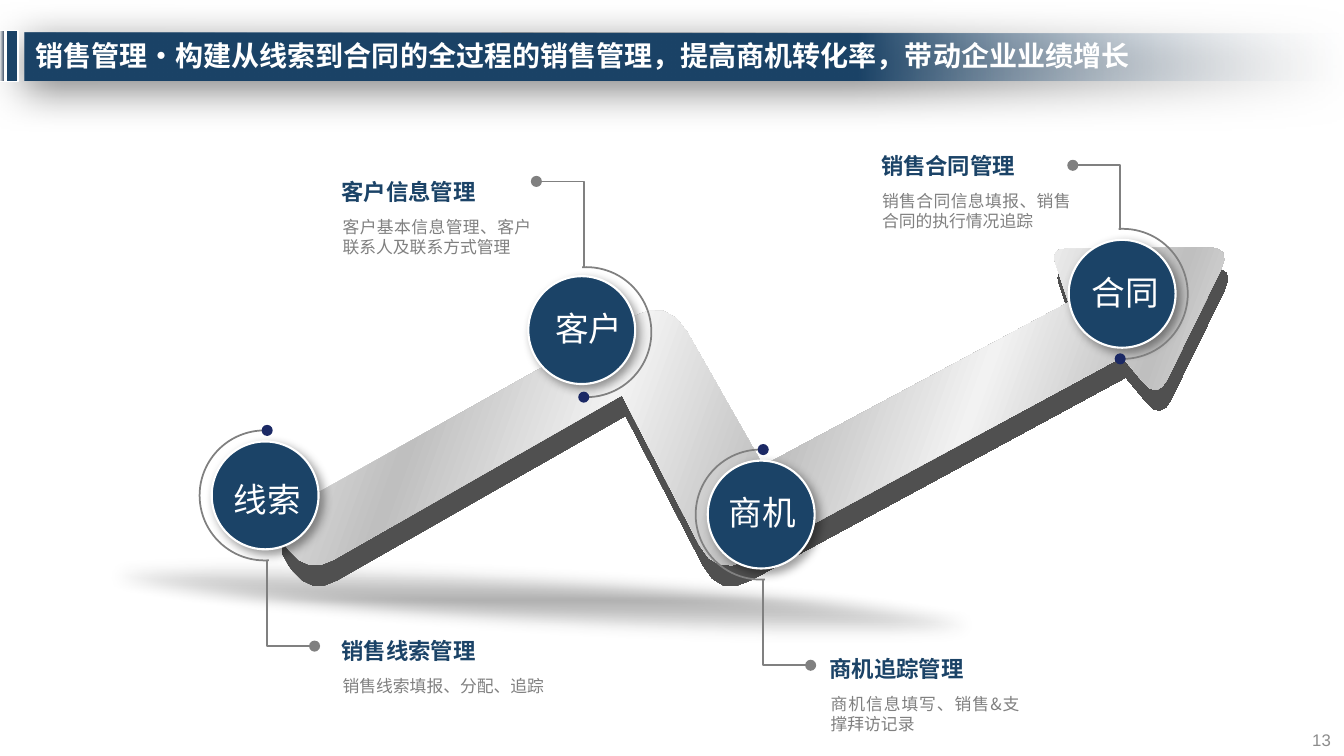
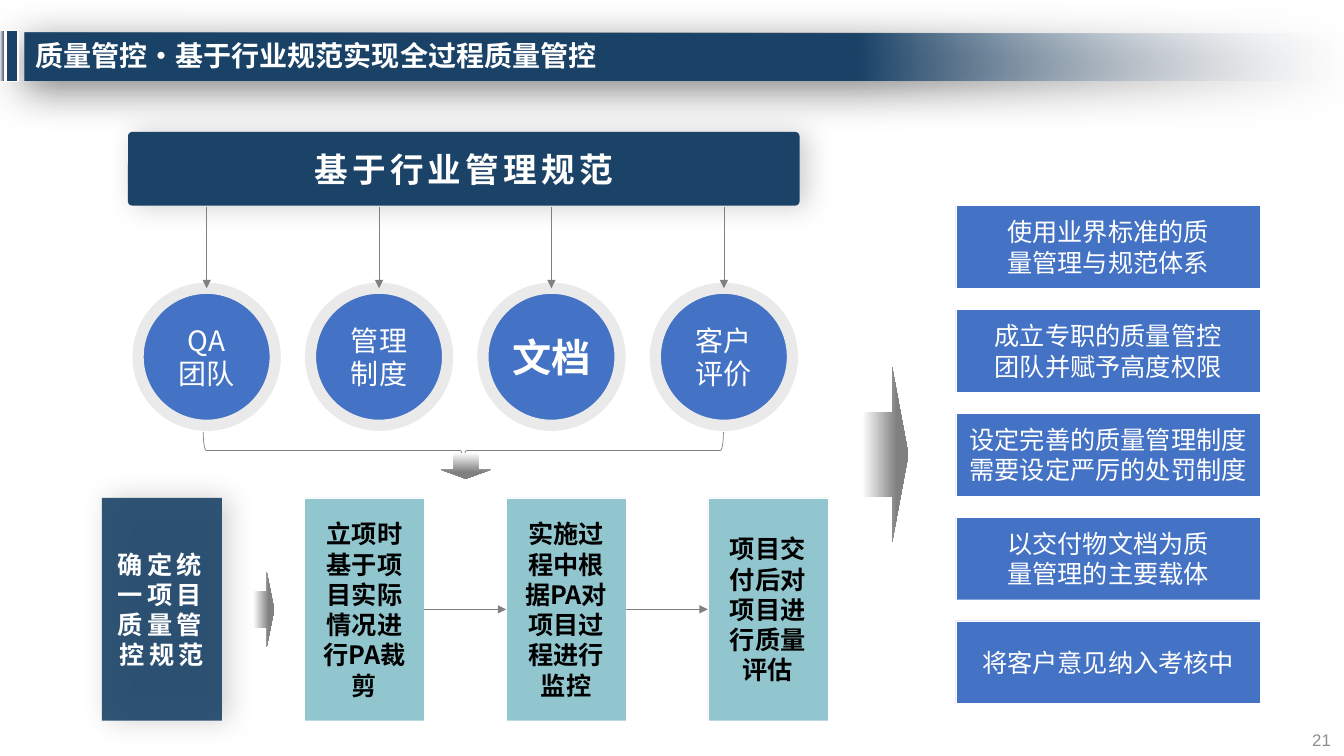
from lxml import etree
from pptx import Presentation
from pptx import util as u
from pptx.dml.color import RGBColor
from pptx.enum import shapes, text
from pptx.oxml import parse_xml
from pptx.oxml.ns import nsdecls, qn

C = {
    "navy": "1B4367", "blue": "4472C4", "teal": "91C6CE", "dot": "1B2965",
    "gray": "808080", "number": "8C8C8C", "ring": "EAEAEA", "side": "505050",
    "slate": "44546A", "pale": "F2F2F2", "silver": "BFBFBF", "mist": "F6F8FC",
    "white": "FFFFFF", "black": "000000",
}
FONT = "Noto Sans CJK SC"
SHAPE = shapes.MSO_SHAPE
ALIGN = text.PP_ALIGN
ANCHOR = text.MSO_ANCHOR
ARROW_FADE = [(0, "white"), (75, "gray")]


def rgb(name):
    return RGBColor.from_string(C[name])


def color_xml(name, alpha=100):
    return (f'<a:srgbClr val="{C[name]}"><a:alpha val="{alpha * 1000}"/>'
            '</a:srgbClr>')


def set_fill(sp, fill, angle=0):
    """Fill with nothing, a colour name, or (position, colour[, alpha]) stops.

    An angle of None makes the gradient follow the shape from its middle.
    """
    if fill is None:
        sp.fill.background()
    elif isinstance(fill, str):
        sp.fill.solid()
        sp.fill.fore_color.rgb = rgb(fill)
    else:
        stops = "".join(f'<a:gs pos="{pos * 1000}">{color_xml(*color)}</a:gs>'
                        for pos, *color in fill)
        if angle is None:
            way = ('<a:path path="shape"><a:fillToRect l="50000" t="50000" '
                   'r="50000" b="50000"/></a:path>')
        else:
            way = f'<a:lin ang="{angle * 60000}" scaled="0"/>'
        sp.fill.background()
        props = sp._element.spPr
        props.replace(props.find(qn("a:noFill")), parse_xml(
            f'<a:gradFill {nsdecls("a")} rotWithShape="1">'
            f'<a:gsLst>{stops}</a:gsLst>{way}</a:gradFill>'))


def style(sp, fill=None, angle=0, line=None, width=1, shadow=None,
          shadow_color="black", soft=0):
    """Shadow is (alpha, blur, distance, direction), in points and degrees."""
    set_fill(sp, fill, angle)
    if line:
        sp.line.color.rgb = rgb(line)
        sp.line.width = u.Pt(width)
    else:
        sp.line.fill.background()
    sp.shadow.inherit = False
    effects = sp._element.spPr.find(qn("a:effectLst"))
    if shadow:
        alpha, blur, dist, direction = shadow
        effects.append(parse_xml(
            f'<a:outerShdw {nsdecls("a")} blurRad="{u.Pt(blur)}" '
            f'dist="{u.Pt(dist)}" dir="{direction * 60000}" algn="ctr" '
            f'rotWithShape="0">{color_xml(shadow_color, alpha)}'
            '</a:outerShdw>'))
    if soft:
        etree.SubElement(effects, qn("a:softEdge")).set("rad", str(u.Pt(soft)))
    return sp


def add_shape(s, kind, x, y, w, h, adj=(), rotation=0, **look):
    sp = s.shapes.add_shape(kind, *map(u.Inches, (x, y, w, h)))
    for i, value in enumerate(adj):
        sp.adjustments[i] = value
    sp.rotation = rotation
    return style(sp, **look)


def add_dot(s, cx, cy, fill):
    add_shape(s, SHAPE.OVAL, cx - 0.055, cy - 0.055, 0.11, 0.11, fill=fill)


def add_outline(s, points, closed=True, **look):
    emu = [(u.Inches(x), u.Inches(y)) for x, y in points]
    builder = s.shapes.build_freeform(*emu[0])
    builder.add_line_segments(emu[1:], close=closed)
    return style(builder.convert_to_shape(), **look)


def write(sp, content, size=12, color="white", bold=False, align=ALIGN.LEFT,
          anchor=ANCHOR.TOP, inset=(0.1, 0.05), wrap=True, spacing=0,
          font=FONT, line_spacing=None):
    tf = sp.text_frame
    tf.auto_size = text.MSO_AUTO_SIZE.NONE
    tf.word_wrap = wrap
    tf.vertical_anchor = anchor
    tf.margin_left = tf.margin_right = u.Inches(inset[0])
    tf.margin_top = tf.margin_bottom = u.Inches(inset[1])
    for i, line in enumerate(content.split("\n")):
        p = tf.add_paragraph() if i else tf.paragraphs[0]
        p.alignment = align
        p.line_spacing = line_spacing
        r = p.add_run()
        r.text = line
        r.font.size = u.Pt(size)
        r.font.bold = bold
        r.font.color.rgb = rgb(color)
        r.font.name = font
        props = r.font._element
        etree.SubElement(props, qn("a:ea")).set("typeface", font)
        if spacing:
            props.set("spc", str(spacing * 100))
    return sp


def write_centered(sp, content, **form):
    return write(sp, content, align=ALIGN.CENTER, anchor=ANCHOR.MIDDLE, **form)


def add_text(s, content, x, y, w, h, **form):
    box = s.shapes.add_textbox(*map(u.Inches, (x, y, w, h)))
    return write(box, content, **form)


def add_arrow(s, start, end, begin_box=None, end_box=None, end_site=0):
    """Join the right side of begin_box and the given site of end_box."""
    line = s.shapes.add_connector(
        shapes.MSO_CONNECTOR.STRAIGHT, *map(u.Inches, (*start, *end)))
    if begin_box is not None:
        line.begin_connect(begin_box, 3)
    if end_box is not None:
        line.end_connect(end_box, end_site)
    line.line.color.rgb = rgb("gray")
    line.line.width = u.Pt(0.5)
    props = line._element.spPr
    etree.SubElement(props.find(qn("a:ln")), qn("a:tailEnd")).set(
        "type", "triangle")
    etree.SubElement(props, qn("a:effectLst"))


def add_slide(prs, title, number):
    s = prs.slides.add_slide(prs.slide_layouts[5])
    add_outline(s, [(0.24, 0.32), (13.35, 0.33), (13.34, 0.8), (0.24, 0.8)],
                fill=[(0, "navy"), (63, "navy"), (100, "mist", 0)],
                shadow=(50, 31, 6, 97))
    add_text(s, number, 12.65, 7.17, 0.68, 0.34, color="number",
             font="Arial", align=ALIGN.RIGHT, anchor=ANCHOR.MIDDLE,
             inset=(0.13, 0.07))
    add_shape(s, SHAPE.RECTANGLE, 0.06, 0.3, 0.12, 0.51, fill="navy",
              line="white")
    add_shape(s, SHAPE.RECTANGLE, -0.01, 0.3, 0.06, 0.51, line="white",
              fill=[(12, "pale"), (87, "slate")])
    heading = s.shapes.title
    heading.left, heading.top, heading.width, heading.height = map(
        u.Inches, (0.25, 0.34, 12.2, 0.46))
    write(heading, title, size=20, bold=True, anchor=ANCHOR.MIDDLE,
          line_spacing=0.9)
    s.shapes._spTree.append(heading._element)  # in front of the band
    return s


def round_corners(corners, steps=4):
    """Turn (x, y, radius) corners into points along quadratic curves."""
    points = []
    for i, (x, y, radius) in enumerate(corners):
        if not radius:
            points.append((x, y))
            continue
        ends = []
        for nx, ny, _ in (corners[i - 1], corners[(i + 1) % len(corners)]):
            part = radius / ((nx - x) ** 2 + (ny - y) ** 2) ** 0.5
            ends.append((x + (nx - x) * part, y + (ny - y) * part))
        for k in range(steps + 1):
            t = k / steps
            points.append(tuple(
                (1 - t) ** 2 * a + 2 * t * (1 - t) * b + t * t * c
                for a, b, c in zip(ends[0], (x, y), ends[1])))
    return points


def add_growth_arrow(s):
    add_shape(s, SHAPE.OVAL, 0.53, 5.59, 9.67, 0.73, rotation=3.4, angle=None,
              fill=[(0, "black", 30), (29, "black", 18), (100, "silver", 0)],
              soft=12)
    face = round_corners([
        (2.65, 5.17, 0.3), (3.05, 5.7, 0.3), (6.17, 3.92, 0),
        (7.1, 5.72, 0.35), (11.13, 3.54, 0), (11.48, 3.96, 0.22),
        (12.22, 2.45, 0.25), (10.42, 2.47, 0.15), (10.6, 3, 0),
        (7.57, 4.62, 0), (6.62, 2.95, 0.4)])
    bands = [(pos, "silver" if i % 2 else "pale")
             for i, pos in enumerate((0, 19, 37, 54, 71, 86, 100))]
    add_outline(s, face, fill=bands, angle=20, shadow=(100, 0, 15, 80),
                shadow_color="side")


def add_stage(s, label, x, y, label_at, arc, stem, name, detail, note, width,
              below):
    """Circle at x, y with its arc and a stem to a note below or above it."""
    arc_x, arc_y = arc
    size = 1.29
    side = 1 if below else -1
    stem_x = arc_x + size / 2 + 0.025 * side
    near, far = (arc_y, arc_y + size)[::side]
    elbow_y, end_x = far + stem * side, stem_x + 0.47 * side
    add_shape(s, SHAPE.OVAL, x, y, 1.06, 1.07, fill="navy", line="white",
              width=1.5, shadow=(40, 7, 4, 45))
    add_text(s, label, *label_at, 1.04, 0.5, size=24, align=ALIGN.CENTER)
    add_shape(s, SHAPE.ARC, arc_x, arc_y, size, size, line="gray", width=1.25,
              adj=(51.79, 162) if below else (159.79, 54))
    add_dot(s, stem_x, near, "dot")
    add_outline(s, [(stem_x, far), (stem_x, elbow_y), (end_x, elbow_y)],
                closed=False, line="gray", width=1.25)
    add_dot(s, end_x, elbow_y, "gray")
    note_x, note_y = note
    add_text(s, name, note_x, note_y, width, 0.37, size=16, color="navy",
             bold=True)
    add_text(s, detail, note_x + 0.01, note_y + 0.38, width, 0.5,
             color="gray", align=ALIGN.JUSTIFY)


def sales_slide(prs):
    s = add_slide(prs, "销售管理·构建从线索到合同的全过程的销售管理，"
                       "提高商机转化率，带动企业业绩增长", "13")
    add_growth_arrow(s)
    for stage in (
        ("线索", 2.1, 4.38, (2.13, 4.7), (1.98, 4.27), 0.85, "销售线索管理",
         "销售线索填报、分配、追踪", (3.29, 6.27), 2.43, True),
        ("商机", 7.02, 4.57, (7.04, 4.83), (6.9, 4.46), 0.85, "商机追踪管理",
         "商机信息填写、销售&支撑拜访记录", (8.13, 6.45), 2.07, True),
        ("客户", 5.24, 2.74, (5.32, 3.01), (5.17, 2.65), 0.85, "客户信息管理",
         "客户基本信息管理、客户联系人及联系方式管理", (3.29, 1.72), 2.07, False),
        ("合同", 10.6, 2.38, (10.64, 2.65), (10.49, 2.27), 0.63, "销售合同管理",
         "销售合同信息填报、销售合同的执行情况追踪", (8.64, 1.46), 2.07, False),
    ):
        add_stage(s, *stage)


def add_block_arrow(s, x, y, w, h, rotation=0):
    add_shape(s, SHAPE.RIGHT_ARROW, x, y, w, h, adj=(0.483, 0.351),
              rotation=rotation, fill=ARROW_FADE)


def add_standards(s):
    banner = add_shape(s, SHAPE.ROUNDED_RECTANGLE, 1.27, 1.31, 6.66, 0.73,
                       adj=(0.055,), fill="navy", shadow=(20, 20, 5, 0))
    write_centered(banner, "基于行业管理规范", size=24, bold=True, spacing=3)
    for i, label in enumerate(("QA\n团队", "管理\n制度", "文档", "客户\n评价")):
        x = 1.37 + 1.71 * i
        strong = label == "文档"
        circle = add_shape(s, SHAPE.OVAL, x, 2.86, 1.36, 1.36, fill="blue",
                           line="ring", width=8)
        write_centered(circle, label, size=28 if strong else 20, bold=strong,
                       inset=(0, 0.16))
        add_arrow(s, (x + 0.68, 2.05), (x + 0.68, 2.86), end_box=circle)
    add_shape(s, SHAPE.RIGHT_BRACE, 4.41, 1.89, 0.37, 5.16, rotation=90,
              line="gray", width=0.5)
    add_block_arrow(s, 4.49, 4.37, 0.26, 0.5, rotation=90)


def add_process(s):
    top, w, h = 4.94, 1.19, 2.21
    first = add_shape(s, SHAPE.RECTANGLE, 1.01, top, w, h,
                      fill=[(0, "navy", 90), (100, "navy", 90)],
                      shadow=(20, 20, 5, 0))
    write_centered(first, "确定统一项目质量管控规范", size=18, bold=True,
                   spacing=3)
    add_block_arrow(s, 2.51, 5.68, 0.21, 0.74)
    previous = None
    for i, step in enumerate(("立项时基于项目实际情况进行PA裁剪",
                              "实施过程中根据PA对项目过程进行监控",
                              "项目交付后对项目进行质量评估")):
        x = 3.02 + 2 * i
        box = add_shape(s, SHAPE.RECTANGLE, x, top, w, h, fill="teal",
                        line="white", width=0.25)
        write_centered(box, step, size=18, color="black", bold=True,
                       inset=(0.12, 0.11))
        if previous is not None:
            add_arrow(s, (x - 0.81, top + h / 2), (x, top + h / 2),
                      previous, box, end_site=1)
        previous = box


def quality_slide(prs):
    s = add_slide(prs, "质量管控·基于行业规范实现全过程质量管控", "21")
    add_standards(s)
    add_process(s)
    add_block_arrow(s, 8.55, 3.64, 0.46, 1.74)
    for i, measure in enumerate((
            "使用业界标准的质\n量管理与规范体系",
            "成立专职的质量管控\n团队并赋予高度权限",
            "设定完善的质量管理制度\n需要设定严厉的处罚制度",
            "以交付物文档为质\n量管理的主要载体",
            "将客户意见纳入考核中")):
        box = add_shape(s, SHAPE.RECTANGLE, 9.48, 2.04 + 1.03 * i, 3.02, 0.82,
                        fill="blue", line="white", width=0.25)
        write_centered(box, measure, size=18, inset=(0.23, 0.11), wrap=False)


def main():
    prs = Presentation()
    prs.slide_width, prs.slide_height = u.Inches(13.33), u.Inches(7.5)
    sales_slide(prs)
    quality_slide(prs)
    prs.save("out.pptx")


if __name__ == "__main__":
    main()
